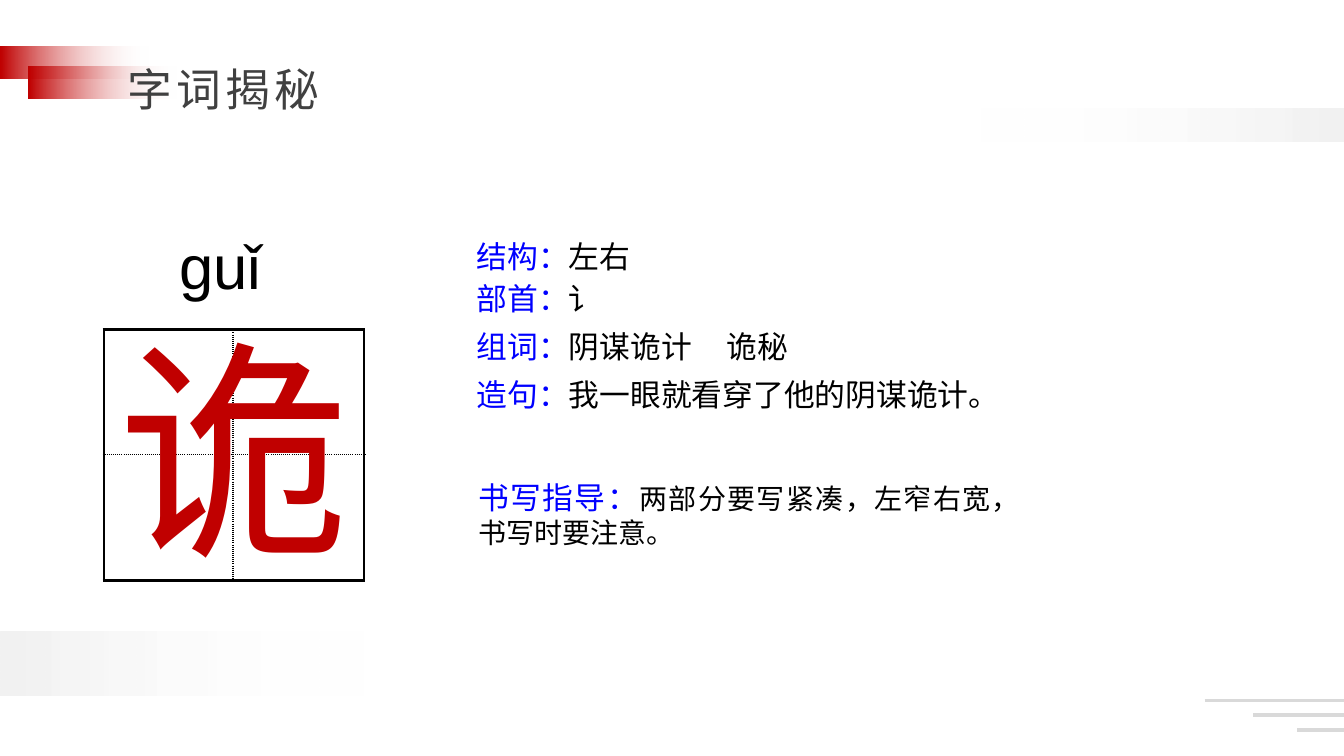
"""Build a Chinese vocabulary slide that explains the character 诡."""
from dataclasses import dataclass

from lxml.etree import SubElement
from pptx import Presentation
from pptx.dml.color import RGBColor
from pptx.enum.shapes import MSO_CONNECTOR, MSO_SHAPE
from pptx.enum.text import MSO_AUTO_SIZE, PP_ALIGN
from pptx.oxml.ns import qn
from pptx.util import Inches, Pt


@dataclass(frozen=True)
class Theme:
    red: str = "C00000"
    pale: str = "F2F2F2"
    rule: str = "D9D9D9"
    white: str = "FFFFFF"
    black: str = "000000"
    gray: str = "404040"
    blue: str = "0000FF"
    heading_font: str = "Karla"
    body_font: str = "Arial"
    heading: int = 32
    body: int = 22
    note: int = 20
    pinyin: int = 44
    glyph: int = 166
    heavy: float = 2.25
    dotted: float = 1.5
    stripe: float = 2.75


THEME = Theme()
WIDTH, HEIGHT = Inches(13.333), Inches(7.5)

# Positions and sizes below are percentages of the slide's width and height.
BARS = [
    ((0, 6.13, 11.03, 4.27), THEME.red, False),
    ((2.1, 8.8, 11.03, 4.27), THEME.red, False),
    ((0, 83.6, 27.15, 8.4), THEME.pale, False),
    ((72.85, 14.4, 27.15, 4.27), THEME.pale, True),
]
STRIPE_STARTS, STRIPE_TOP, STRIPE_STEP = [89.63, 93.23, 96.53], 92.67, 1.93
TITLE, TITLE_BOX = "字词揭秘", (8.78, 4, 20.85, 11.2)
FACT_LEFT, FACT_HEIGHT = 34.73, 6.27
FACTS = [
    ("结构：", "左右", 30.8, 19.2),
    ("部首：", "讠", 36.4, 23.85),
    ("组词：", "阴谋诡计\t诡秘", 42.67, 33.45),
    ("造句：", "我一眼就看穿了他的阴谋诡计。", 49.07, 44.85),
]
WORD_TAB = 18.6
GUIDE = ("书写指导：", "两部分要写紧凑，左窄右宽，书写时要注意。")
GUIDE_BOX = (34.88, 62.67, 39.68, 10.8)
GRID_ORIGIN, GRID_COLUMNS, GRID_ROWS = (7.73, 43.6), [9.6, 9.75], [16.53, 16.67]
GLYPH, GLYPH_BOX = "诡", (8.1, 39.87, 18.98, 38.53)
PINYIN, PINYIN_BOX = "guǐ", (12.6, 29.47, 7.73, 11.2)


def across(share):
    return round(WIDTH * share / 100)


def down(share):
    return round(HEIGHT * share / 100)


def place(box):
    left, top, width, height = box
    return across(left), down(top), across(width), down(height)


def color(value):
    return RGBColor.from_string(value)


def add_bar(slide, box, tint, fades_left):
    shape = slide.shapes.add_shape(MSO_SHAPE.RECTANGLE, *place(box))
    shape.shadow.inherit = False
    shape.line.fill.background()
    shape.fill.gradient()
    shape.fill.gradient_angle = 0
    tints = [THEME.white, tint] if fades_left else [tint, THEME.white]
    for stop, value in zip(shape.fill.gradient_stops, tints):
        stop.color.rgb = color(value)
    for node in shape.fill._xPr.iter(qn("a:srgbClr")):
        if node.get("val") == THEME.white:
            SubElement(node, qn("a:alpha")).set("val", "0")


def add_stripe(slide, start, top):
    stripe = slide.shapes.add_connector(
        MSO_CONNECTOR.STRAIGHT, across(start), down(top), WIDTH, down(top))
    stripe.line.color.rgb = color(THEME.rule)
    stripe.line.width = Pt(THEME.stripe)
    SubElement(stripe._element.spPr, qn("a:effectLst"))


def add_text(slide, box, runs, font=THEME.body_font, wrap=True):
    shape = slide.shapes.add_textbox(*place(box))
    shape.text_frame.word_wrap = wrap
    shape.text_frame.auto_size = MSO_AUTO_SIZE.SHAPE_TO_FIT_TEXT
    paragraph = shape.text_frame.paragraphs[0]
    for text, size, tint in runs:
        run = paragraph.add_run()
        run.text = text
        run.font.name = font
        run.font.size = Pt(size)
        run.font.color.rgb = color(tint)
    return shape, paragraph


def add_tab_stop(paragraph, position):
    stops = SubElement(paragraph._p.get_or_add_pPr(), qn("a:tabLst"))
    stop = SubElement(stops, qn("a:tab"))
    stop.set("pos", str(across(position)))
    stop.set("algn", "l")


def set_border(cell, side, outer):
    width = Pt(THEME.heavy if outer else THEME.dotted)
    line = SubElement(cell._tc.get_or_add_tcPr(), qn(f"a:ln{side}"), w=str(width))
    fill = SubElement(line, qn("a:solidFill"))
    SubElement(fill, qn("a:srgbClr")).set("val", THEME.black)
    SubElement(line, qn("a:prstDash")).set("val", "solid" if outer else "sysDot")


def add_writing_grid(slide):
    box = (*GRID_ORIGIN, sum(GRID_COLUMNS), sum(GRID_ROWS))
    table = slide.shapes.add_table(len(GRID_ROWS), len(GRID_COLUMNS), *place(box)).table
    table.first_row = table.horz_banding = False
    for column, width in zip(table.columns, GRID_COLUMNS):
        column.width = across(width)
    for row, height in zip(table.rows, GRID_ROWS):
        row.height = down(height)
    for row in range(len(GRID_ROWS)):
        for column in range(len(GRID_COLUMNS)):
            cell = table.cell(row, column)
            outer_sides = {"L": column == 0, "R": column == len(GRID_COLUMNS) - 1,
                           "T": row == 0, "B": row == len(GRID_ROWS) - 1}
            for side, outer in outer_sides.items():
                set_border(cell, side, outer)
            cell.fill.background()


def main():
    presentation = Presentation()
    presentation.slide_width, presentation.slide_height = WIDTH, HEIGHT
    slide = presentation.slides.add_slide(presentation.slide_layouts[6])
    for bar in BARS:
        add_bar(slide, *bar)
    for index, start in enumerate(STRIPE_STARTS):
        add_stripe(slide, start, STRIPE_TOP + index * STRIPE_STEP)

    _, title = add_text(slide, TITLE_BOX, [(TITLE, THEME.heading, THEME.gray)],
                        THEME.heading_font)
    title.line_spacing = 1.5
    title.runs[0].font._element.set("spc", "300")

    label, advice = GUIDE
    _, guide = add_text(slide, GUIDE_BOX, [(label, THEME.body, THEME.blue),
                                           (advice, THEME.note, THEME.black)])
    guide.alignment = PP_ALIGN.JUSTIFY

    for index, (label, fact, top, width) in enumerate(FACTS):
        shape, paragraph = add_text(
            slide, (FACT_LEFT, top, width, FACT_HEIGHT),
            [(label, THEME.body, THEME.blue), (fact, THEME.body, THEME.black)])
        if index == 0:
            shape.fill.solid()
            shape.fill.fore_color.rgb = color(THEME.white)
        if "\t" in fact:
            add_tab_stop(paragraph, WORD_TAB)

    add_writing_grid(slide)
    add_text(slide, GLYPH_BOX, [(GLYPH, THEME.glyph, THEME.red)], wrap=False)
    add_text(slide, PINYIN_BOX, [(PINYIN, THEME.pinyin, THEME.black)], wrap=False)
    presentation.save("out.pptx")


if __name__ == "__main__":
    main()
